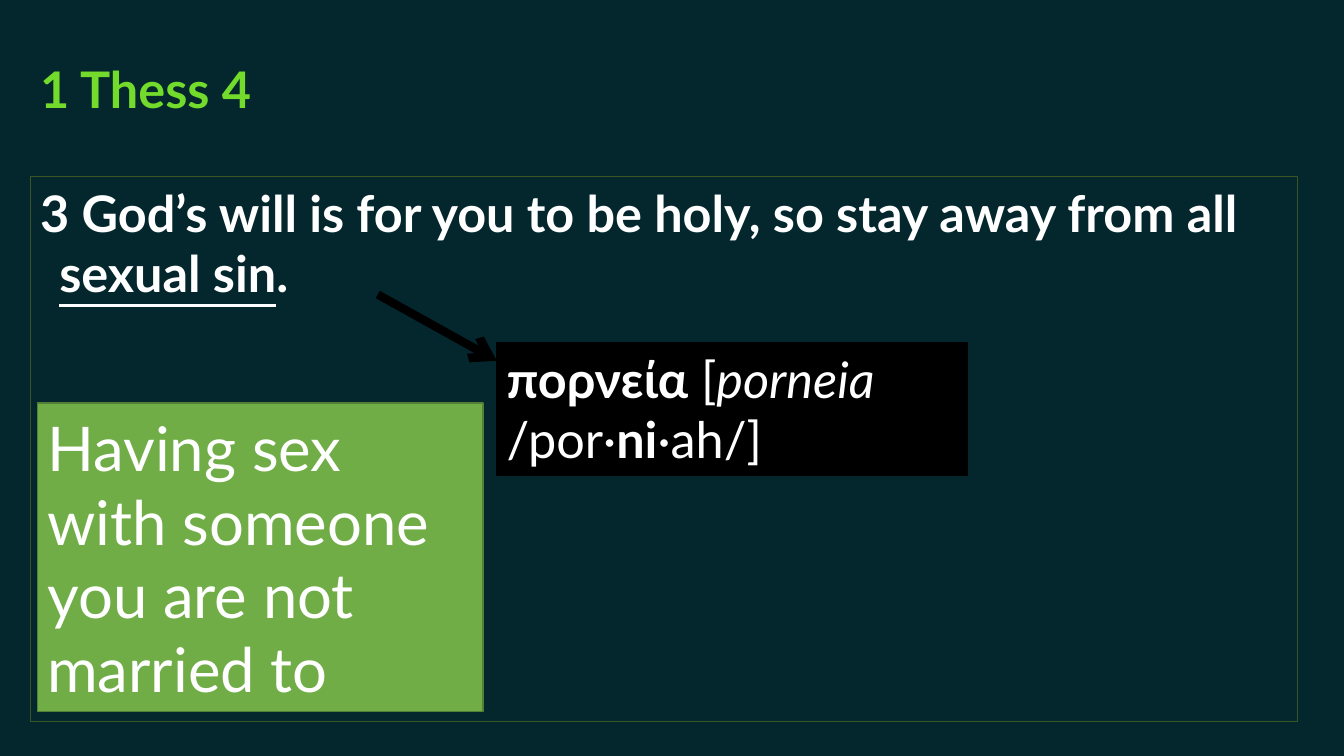
from dataclasses import dataclass
from pptx import Presentation
from pptx.dml.color import RGBColor as Rgb
from pptx.enum.shapes import MSO_CONNECTOR as Link, MSO_SHAPE as Shape
from pptx.enum.text import MSO_ANCHOR as Anchor, MSO_AUTO_SIZE as Fit, PP_ALIGN as Align
from pptx.oxml.ns import qn
from pptx.util import Cm, Pt
from lxml.etree import SubElement as Sub


@dataclass(frozen=True)
class Theme:
    font: str = "Lato"
    back: str = "03272D"
    lime: str = "72DB2B"
    moss: str = "385723"
    green: str = "70AD47"
    edge: str = "538035"
    black: str = "000000"
    white: str = "FFFFFF"
    main: int = 36
    large: int = 44


look = Theme()


def paint(fill, color):
    fill.solid()
    fill.fore_color.rgb = Rgb.from_string(color)


def outline(shape, color, width):
    paint(shape.line.fill, color)
    shape.line.width = Pt(width)


def place(shape, box):
    shape.left, shape.top, shape.width, shape.height = (Cm(n) for n in box)


def write(shape, *runs, size=look.main, color=look.white, anchor=Anchor.TOP,
          before=0, indent=0, fit=Fit.NONE):
    frame = shape.text_frame
    frame.word_wrap = True
    frame.auto_size = fit
    frame.vertical_anchor = anchor
    para = frame.paragraphs[0]
    para.alignment = Align.LEFT
    para.space_before = Pt(before)
    para.line_spacing = 1.0
    props = para._p.get_or_add_pPr()
    props.set("marL", str(Cm(indent)))
    props.set("indent", str(-Cm(indent)))
    Sub(props, qn("a:buNone"))
    for words, style in runs:
        run = para.add_run()
        run.text = words
        font = run.font
        font.name = look.font
        font.size = Pt(size)
        font.color.rgb = Rgb.from_string(color)
        font.bold = "b" in style
        font.italic = "i" in style
        font.underline = "u" in style


def panel(slide, box, fill, edge, *runs, anchor=Anchor.MIDDLE, **style):
    shape = slide.shapes.add_shape(Shape.RECTANGLE, *(Cm(n) for n in box))
    shape.shadow.inherit = False
    paint(shape.fill, fill)
    outline(shape, edge, 1)
    write(shape, *runs, anchor=anchor, fit=Fit.SHAPE_TO_FIT_TEXT, **style)


def heading(slide, box):
    title = slide.shapes.title
    place(title, box)
    write(title, ("1 Thess 4", "b"), color=look.lime, anchor=Anchor.MIDDLE)


def verse(slide, box):
    body = slide.placeholders[1]
    place(body, box)
    outline(body, look.moss, 0.75)
    write(body,
          ("3 God’s will is for you to be holy, so stay away from all ", "b"),
          ("sexual sin", "bu"), (".", "b"), before=7.5, indent=0.48)


def gloss(slide, box):
    left, top = box[:2]
    panel(slide, box, look.black, look.black,
          ("πορνεία", "b"), (" [", ""), ("porneia", "i"),
          (" /por·", ""), ("ni", "b"), ("·ah/]", ""), anchor=Anchor.TOP)
    ends = left - 3, top - 1.22, left, top + 0.45
    arrow = slide.shapes.add_connector(Link.STRAIGHT, *(Cm(n) for n in ends))
    outline(arrow, look.black, 6)
    Sub(arrow.line._get_or_add_ln(), qn("a:tailEnd"), type="arrow")
    Sub(arrow._element.spPr, qn("a:effectLst"))


def meaning(slide, box):
    panel(slide, box, look.green, look.edge,
          ("Having sex with someone you are not married to", ""),
          size=look.large)


def main():
    deck = Presentation()
    deck.slide_width, deck.slide_height = Cm(33.87), Cm(19.05)
    slide = deck.slides.add_slide(deck.slide_layouts[1])
    paint(slide.background.fill, look.back)
    heading(slide, (0.76, 0.38, 31.95, 3.68))
    verse(slide, (0.76, 4.45, 31.95, 13.74))
    gloss(slide, (12.52, 8.64, 11.86, 3.33))
    meaning(slide, (0.94, 10.16, 11.23, 7.77))
    deck.save("out.pptx")


if __name__ == "__main__":
    main()
